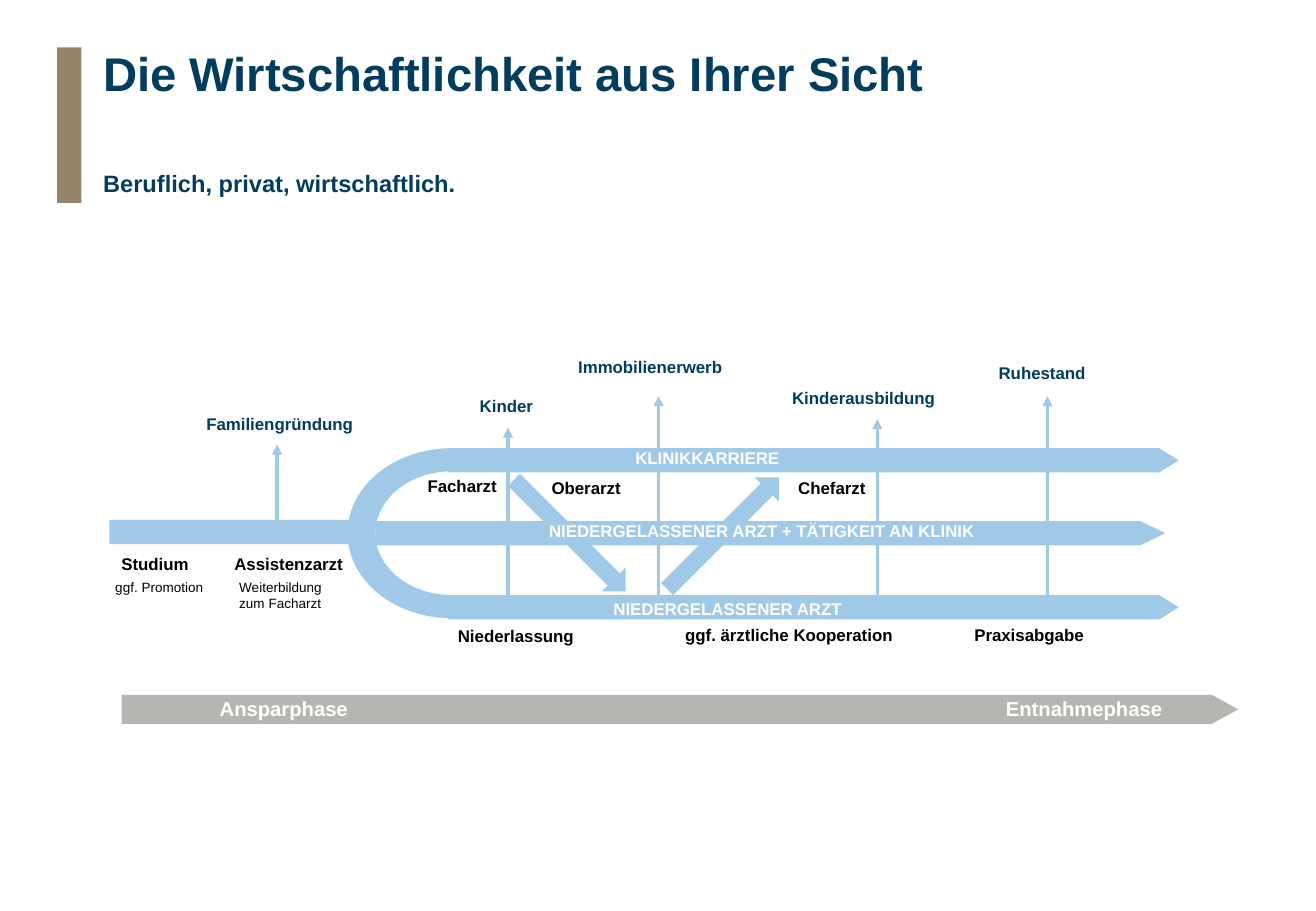
from math import cos, pi, sin

from lxml.etree import SubElement
from pptx import Presentation
from pptx.dml.color import RGBColor
from pptx.enum.shapes import MSO_CONNECTOR, MSO_SHAPE as Shape
from pptx.oxml.ns import qn
from pptx.util import Inches, Pt

# Content: label, left, top, width
TITLE = "Die Wirtschaftlichkeit aus Ihrer Sicht"
SUBTITLE = "Beruflich, privat, wirtschaftlich."
CAREER_STEPS = [
    ("Studium", 0.9, 4.51, 0.88),
    ("Assistenzarzt", 1.83, 4.51, 1.22),
    ("Facharzt", 3.42, 3.87, 1.13),
    ("Oberarzt", 4.44, 3.88, 1.12),
    ("Chefarzt", 6.47, 3.88, 0.88),
    ("Niederlassung", 3.67, 5.1, 1.36),
    ("ggf. ärztliche Kooperation", 5.54, 5.09, 2.14),
    ("Praxisabgabe", 7.92, 5.09, 1.36),
]
STEP_NOTES = [
    ("ggf. Promotion", 0.85, 4.72, 1.08),
    ("Weiterbildung zum Facharzt", 1.87, 4.72, 1.08),
]
LIFE_EVENTS = [
    ("Familiengründung", 1.6, 3.36, 1.8),
    ("Kinder", 3.85, 3.21, 0.86),
    ("Immobilienerwerb", 4.66, 2.89, 1.64),
    ("Kinderausbildung", 6.42, 3.14, 1.64),
    ("Ruhestand", 8.12, 2.94, 1.13),
]
LANE_LABELS = [
    ("KLINIKKARRIERE", 5.13, 3.64, 4.1),
    ("NIEDERGELASSENER ARZT", 4.95, 4.88, 3.27),
    ("NIEDERGELASSENER ARZT + TÄTIGKEIT AN KLINIK", 4.42, 4.24, 5.17),
]
PHASES = [("Ansparphase", 1.71, 5.68, 1.26), ("Entnahmephase", 8.18, 5.68, 1.49)]

# Geometry: x, bottom, top of event arrows; left, top, width, tip of lanes
EVENT_ARROWS = [(2.28, 4.3, 3.66), (4.18, 4.9, 3.52), (5.42, 4.92, 3.26),
                (7.22, 4.91, 3.45), (8.62, 4.91, 3.26)]
LANES = [(3.69, 3.69, 6.01, 0.8), (3.69, 4.9, 6.01, 0.8), (3.09, 4.29, 6.5, 1.03)]
SWITCHES = [(5.81, 3.74, 225), (4.55, 3.76, 315)]
LANE_H = 0.2
FORK_CENTER = (3.72, 4.39)
FORK_OUTER, FORK_INNER = (0.86, 0.7), (0.63, 0.51)

THEME = {
    "font": "Arial",
    "navy": "033D5D", "sky": "9FC9E7", "grey": "B4B6B1", "sand": "96856A",
    "black": "000000", "white": "FFFFFF",
    "title": 28, "subtitle": 14, "phase": 12, "label": 10, "note": 8,
}

prs = Presentation()
prs.slide_width, prs.slide_height = Inches(10.83), Inches(7.5)
shapes = prs.slides.add_slide(prs.slide_layouts[6]).shapes


def color(name):
    return RGBColor.from_string(THEME[name])


def paint(s, fill):
    s.shadow.inherit = False
    s.fill.solid()
    s.fill.fore_color.rgb = color(fill)
    s.line.fill.background()


def add_block(kind, x, y, w, h, fill="sky", tip=None, rotation=0):
    s = shapes.add_shape(kind, Inches(x), Inches(y), Inches(w), Inches(h))
    paint(s, fill)
    s.rotation = rotation
    if tip is not None:
        s.adjustments[0] = tip


def add_text(text, x, y, w, h=0.27, size="label", ink="black", bold=True,
             wrap=True, spacing=None):
    tf = shapes.add_textbox(Inches(x), Inches(y), Inches(w), Inches(h)).text_frame
    tf.word_wrap = wrap
    p = tf.paragraphs[0]
    p.line_spacing = spacing
    r = p.add_run()
    r.text = text
    r.font.name = THEME["font"]
    r.font.size = Pt(THEME[size])
    r.font.bold = bold
    r.font.color.rgb = color(ink)


def add_event_arrow(x, bottom, top):
    s = shapes.add_connector(MSO_CONNECTOR.STRAIGHT, Inches(x), Inches(bottom),
                             Inches(x), Inches(top))
    s.line.color.rgb = color("sky")
    s.line.width = Pt(2)
    SubElement(s.line._get_or_add_ln(), qn("a:tailEnd"), type="triangle")
    SubElement(s._element.spPr, qn("a:effectLst"))


def left_arc(radii, steps=48):
    """Points of the left half of an ellipse, from top to bottom."""
    (cx, cy), (rx, ry) = FORK_CENTER, radii
    angles = [pi * i / steps for i in range(steps + 1)]
    return [(Inches(cx - rx * sin(a)), Inches(cy - ry * cos(a))) for a in angles]


# Heading
add_block(Shape.RECTANGLE, 0.47, 0.39, 0.2, 1.28, fill="sand")
add_text(TITLE, 0.75, 0.35, 8.93, 0.94, size="title", ink="navy", spacing=0.95)
add_text(SUBTITLE, 0.75, 1.34, 8.93, 0.34, size="subtitle", ink="navy")

# Switches between lanes and arrows to life events
for x, y, angle in SWITCHES:
    add_block(Shape.DOWN_ARROW, x, y, 0.28, 1.3, rotation=angle)
for arrow in EVENT_ARROWS:
    add_event_arrow(*arrow)

# Common start, fork and career lanes
add_block(Shape.RECTANGLE, 0.9, 4.28, 2.1, LANE_H)
outline = left_arc(FORK_OUTER) + left_arc(FORK_INNER)[::-1]
builder = shapes.build_freeform(*outline[0])
builder.add_line_segments(outline[1:], close=True)
paint(builder.convert_to_shape(), "sky")
for x, y, w, tip in LANES:
    add_block(Shape.PENTAGON, x, y, w, LANE_H, tip=tip)

# Savings and withdrawal phases
add_block(Shape.PENTAGON, 1, 5.72, 9.19, 0.24, fill="grey", tip=0.91)
for phase in PHASES:
    add_text(*phase, h=0.3, size="phase", ink="white", wrap=False)

# Labels
for step in CAREER_STEPS:
    add_text(*step)
for note in STEP_NOTES:
    add_text(*note, h=0.37, size="note", bold=False)
for event in LIFE_EVENTS:
    add_text(*event, ink="navy")
for lane in LANE_LABELS:
    add_text(*lane, ink="white")

prs.save("out.pptx")
